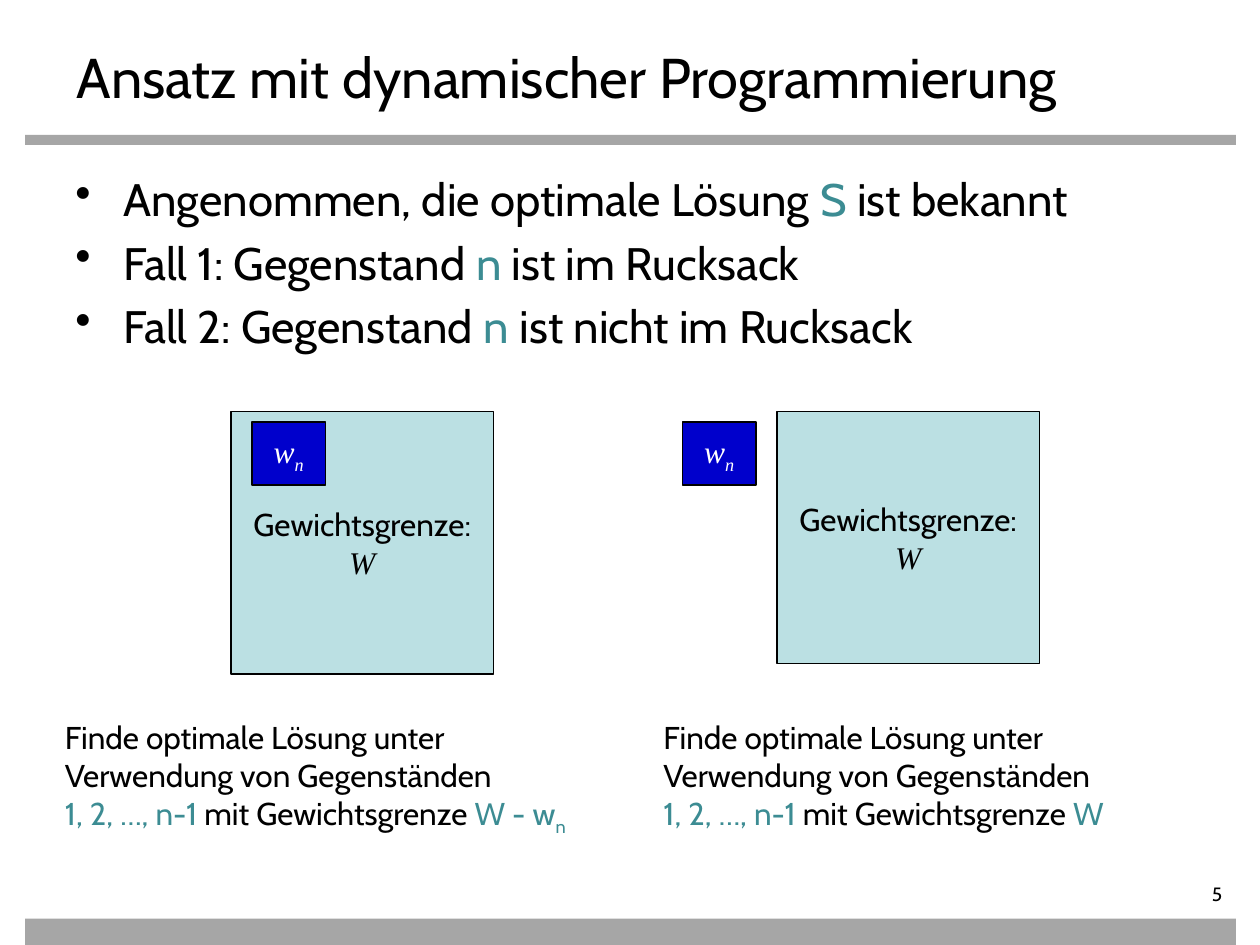
from dataclasses import dataclass

from lxml import etree
from pptx import Presentation
from pptx.dml.color import RGBColor
from pptx.enum.shapes import MSO_SHAPE
from pptx.enum.text import MSO_ANCHOR, PP_ALIGN
from pptx.oxml.ns import qn
from pptx.util import Inches, Pt

RECTANGLE = MSO_SHAPE.RECTANGLE
TOP, MIDDLE = MSO_ANCHOR.TOP, MSO_ANCHOR.MIDDLE
LEFT, CENTER, RIGHT = PP_ALIGN.LEFT, PP_ALIGN.CENTER, PP_ALIGN.RIGHT
TITLE_ONLY = 5
CELL = Inches(10) // 120  # the page is a grid of 120 columns by 90 rows


@dataclass(frozen=True)
class Theme:
    ink: str = "000000"
    accent: str = "3C8C93"
    bar: str = "A6A6A6"
    knapsack: str = "BBE0E3"
    item: str = "0000CC"
    item_ink: str = "FFFFFF"
    font: str = "Cabin"
    math_font: str = "Times New Roman"
    title_size: int = 32
    bullet_size: int = 26
    text_size: int = 18
    number_size: int = 11


THEME = Theme()
ACCENT = {"color": THEME.accent}
MATH = {"font": THEME.math_font, "italic": True}
SUBSCRIPT = {"subscript": True}


def grid(*cells):
    return [round(cell * CELL) for cell in cells]


def add_span(para, text, size=THEME.text_size, color=THEME.ink,
             font=THEME.font, italic=None, subscript=False):
    span = para.add_run()
    span.text = text
    span.font.size = Pt(size)
    span.font.name = font
    span.font.italic = italic
    span.font.color.rgb = RGBColor.from_string(color)
    if subscript:
        span.font._element.set("baseline", "-25000")


def add_bullet(para, indent):
    properties = para._p.get_or_add_pPr()
    properties.set("marL", str(indent))
    properties.set("indent", str(-indent))
    etree.SubElement(properties, qn("a:buChar"), char="•")


def write(box, paragraphs, align=LEFT, anchor=TOP, wrap=True, bullet_indent=0,
          space_before=0, **base):
    """Each paragraph is a list of lines; a line is a list of (text, format)."""
    frame = box.text_frame
    frame.word_wrap = wrap
    frame.vertical_anchor = anchor
    for index, lines in enumerate(paragraphs):
        para = frame.add_paragraph() if index else frame.paragraphs[0]
        if bullet_indent:
            add_bullet(para, bullet_indent)
        para.alignment = align
        if index and space_before:
            para.space_before = Pt(space_before)
        for number, line in enumerate(lines):
            if number:
                para.add_line_break()
            for text, style in line:
                add_span(para, text, **{**base, **style})
    return frame


def add_rectangle(page, place, fill, outline=None):
    shape = page.shapes.add_shape(RECTANGLE, *grid(*place))
    shape.shadow.inherit = False
    shape.fill.solid()
    shape.fill.fore_color.rgb = RGBColor.from_string(fill)
    if outline:
        shape.line.color.rgb = RGBColor.from_string(outline)
        shape.line.width = Pt(0.75)
    else:
        shape.line.fill.background()
    return shape


def add_frame(page, number):
    # Grey bars and page number
    for top, height in ((12.84, 0.96), (87.48, 2.52)):
        add_rectangle(page, (2.4, top, 115.3, height), THEME.bar)
    box = page.shapes.add_textbox(*grid(104.4, 84, 13.2, 2.64))
    frame = write(box, [[[(number, {})]]], align=RIGHT, size=THEME.number_size)
    frame.margin_left = frame.margin_top = frame.margin_bottom = 0


def add_title(page, text, place):
    title = page.shapes.title
    title.left, title.top, title.width, title.height = grid(*place)
    write(title, [[[(text, {})]]], size=THEME.title_size)


def add_bullets(page, place, bullets):
    box = page.shapes.add_textbox(*grid(*place))
    paragraphs = [[[(before, {}), (symbol, ACCENT), (after, {})]]
                  for before, symbol, after in bullets]
    write(box, paragraphs, size=THEME.bullet_size, space_before=5.2,
          bullet_indent=Inches(0.38))


def add_case(page, left, top, knapsack_column, knapsack_rows, item_column, limit):
    # Knapsack with its weight limit
    knapsack = add_rectangle(
        page, (left + knapsack_column, top, 25, knapsack_rows),
        THEME.knapsack, THEME.ink)
    write(knapsack, [[[("Gewichtsgrenze:", {})]], [[("W", MATH)]]],
          align=CENTER, anchor=MIDDLE, wrap=False)

    # Item n
    item = add_rectangle(page, (left + item_column, top + 1, 7, 6),
                         THEME.item, THEME.ink)
    write(item, [[[("w", {}), ("n", SUBSCRIPT)]]], align=CENTER,
          anchor=MIDDLE, wrap=False, color=THEME.item_ink, **MATH)

    # Remaining subproblem
    caption = page.shapes.add_textbox(*grid(left, top + 28.6, 51, 12.1))
    write(caption, [[
        [("Finde optimale Lösung unter Verwendung von Gegenständen ", {})],
        [("1, 2, …, n-1", ACCENT), (" mit Gewichtsgrenze ", {}), *limit],
    ]])


def main():
    deck = Presentation()
    deck.slide_width, deck.slide_height = Inches(10), Inches(7.5)
    page = deck.slides.add_slide(deck.slide_layouts[TITLE_ONLY])
    add_frame(page, "5")
    add_title(page, "Ansatz mit dynamischer Programmierung", (6.1, 3.4, 108, 6.6))
    add_bullets(page, (6, 15.7, 108, 22), [
        ("Angenommen, die optimale Lösung ", "S", " ist bekannt"),
        ("Fall 1: Gegenstand ", "n", " ist im Rucksack"),
        ("Fall 2: Gegenstand ", "n", " ist nicht im Rucksack"),
    ])
    add_case(page, left=5, top=39.2, knapsack_column=17, knapsack_rows=25,
             item_column=19,
             limit=[("W - w", ACCENT), ("n", {**ACCENT, **SUBSCRIPT})])
    add_case(page, left=62, top=39.2, knapsack_column=12, knapsack_rows=24,
             item_column=3, limit=[("W", ACCENT)])
    deck.save("out.pptx")


if __name__ == "__main__":
    main()
